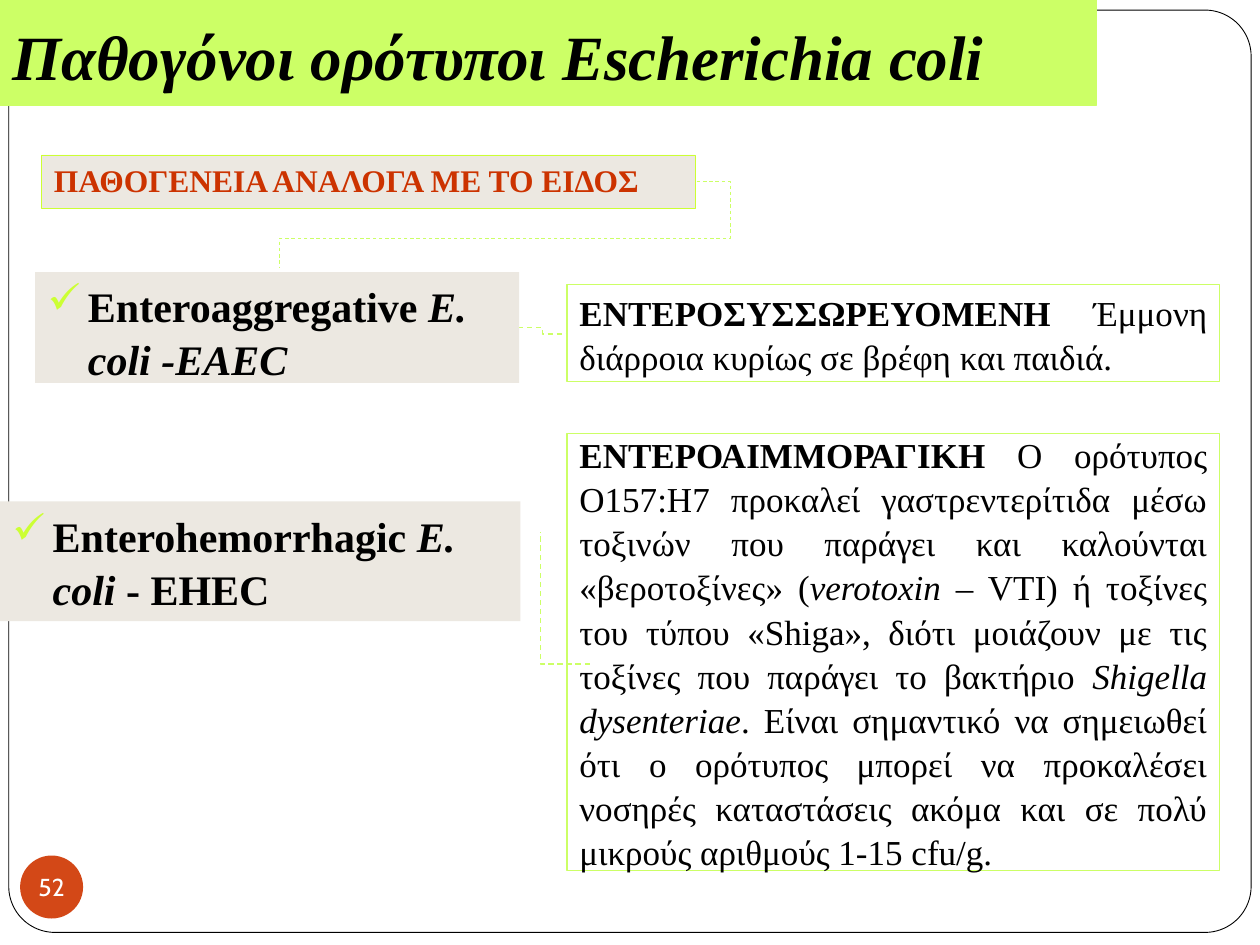
from lxml.etree import SubElement
from pptx import Presentation
from pptx.dml.color import RGBColor
from pptx.enum.dml import MSO_LINE
from pptx.enum.shapes import MSO_CONNECTOR, MSO_SHAPE
from pptx.enum.text import MSO_ANCHOR, MSO_AUTO_SIZE, PP_ALIGN
from pptx.oxml.ns import qn
from pptx.util import Pt

PX = 9144  # 100 px to the inch
SERIF = "Times New Roman"
HUES = {
    "white": "FFFFFF", "black": "000000", "lime": "CCFF66", "neon": "CCFF33",
    "sand": "ECE8E1", "rust": "CC3300", "orange": "D34817",
}


def hue(name):
    return RGBColor.from_string(HUES[name])


def px(*vals):
    return [v * PX for v in vals]


def box(slide, at, fill=None, line=None, width=0.75, kind=MSO_SHAPE.RECTANGLE):
    shape = slide.shapes.add_shape(kind, *px(*at))
    shape.shadow.inherit = False
    if fill:
        shape.fill.solid()
        shape.fill.fore_color.rgb = hue(fill)
    else:
        shape.fill.background()
    if line:
        shape.line.color.rgb = hue(line)
        shape.line.width = Pt(width)
    else:
        shape.line.fill.background()
    return shape


def text(shape, runs, size=20, font=SERIF, color="black", align=PP_ALIGN.LEFT,
         anchor=MSO_ANCHOR.TOP, pad=(10, 5, 10, 5), wrap=True, grow=False,
         hang=0, tick=False, lead=None):
    """Fill a shape with one paragraph; runs are (words, style) with style from 'b' and 'i'."""
    frame = shape.text_frame
    frame.word_wrap = wrap
    frame.vertical_anchor = anchor
    if grow:
        frame.auto_size = MSO_AUTO_SIZE.SHAPE_TO_FIT_TEXT
    (frame.margin_left, frame.margin_top,
     frame.margin_right, frame.margin_bottom) = px(*pad)
    para = frame.paragraphs[0]
    para.alignment = align
    if lead:
        para.line_spacing = lead
    for words, style in runs:
        run = para.add_run()
        run.text = words
        face = run.font
        face.size, face.name = Pt(size), font
        face.bold, face.italic = "b" in style, "i" in style
        face.color.rgb = hue(color)
    props = para._p.get_or_add_pPr()
    if hang:
        props.set("marL", str(hang * PX))
        props.set("indent", str(-hang * PX))
    if tick:
        tint = SubElement(props, qn("a:buClr"))
        SubElement(tint, qn("a:srgbClr"), val=HUES["neon"])
        SubElement(props, qn("a:buChar"), char="✓")


def elbow(slide, start, end, bends=3, adjs=(), width=0.75):
    """Draw a dashed elbow; adjs are the bend places in shares of its size."""
    link = slide.shapes.add_connector(MSO_CONNECTOR.ELBOW, *px(*start, *end))
    link.line.color.rgb = hue("lime")
    link.line.width = Pt(width)
    link.line.dash_style = MSO_LINE.DASH
    props = link._element.spPr
    SubElement(props, qn("a:effectLst"))
    geom = props.find(qn("a:prstGeom"))
    geom.set("prst", f"bentConnector{bends}")
    for n, adj in enumerate(adjs, 1):
        SubElement(geom.find(qn("a:avLst")), qn("a:gd"), name=f"adj{n}",
                   fmla=f"val {round(adj * 100000)}")


def strain(slide, at, runs):
    text(box(slide, at, "sand"), runs, size=24, hang=32, tick=True, lead=1.05)


def detail(slide, at, runs):
    text(box(slide, at, line="lime"), runs, align=PP_ALIGN.JUSTIFY,
         anchor=MSO_ANCHOR.MIDDLE, grow=True, lead=1.05)


def main():
    deck = Presentation()
    deck.slide_width, deck.slide_height = px(1000, 750)
    slide = deck.slides.add_slide(deck.slide_layouts[6])

    frame = box(slide, (7, 8, 986, 732), "white", "black", 0.5,
                MSO_SHAPE.ROUNDED_RECTANGLE)
    frame.adjustments[0] = 0.05
    text(box(slide, (0, 0, 870, 84), "lime", "lime"),
         [("Παθογόνοι ορότυποι Escherichia coli", "bi")], size=36,
         anchor=MSO_ANCHOR.BOTTOM, pad=(10, 5, 10, 10))
    text(box(slide, (16, 679, 50, 50), "orange", kind=MSO_SHAPE.OVAL),
         [("52", "")], size=14, font="Cabin", color="white",
         align=PP_ALIGN.CENTER, anchor=MSO_ANCHOR.MIDDLE, pad=(0, 0, 0, 0),
         wrap=False)
    text(box(slide, (33, 123, 519, 42), "sand", "neon", 0.25),
         [("ΠΑΘΟΓΕΝΕΙΑ ΑΝΑΛΟΓΑ ΜΕ ΤΟ ΕΙΔΟΣ", "b")], size=18, color="rust",
         hang=38)
    elbow(slide, (553, 144), (222, 212), 4, (-0.08, 0.66), 0.5)

    detail(slide, (450, 226, 518, 77), [
        ("ΕΝΤΕΡΟΣΥΣΣΩΡΕΥΟΜΕΝΗ", "b"),
        (" Έμμονη διάρροια κυρίως σε βρέφη και παιδιά.", "")])
    elbow(slide, (411, 260), (450, 265))
    strain(slide, (28, 216, 384, 88), [
        ("Enteroaggregative", "b"), (" E. coli -EAEC", "bi")])

    strain(slide, (0, 398, 413, 95), [
        ("Enterohemorrhagic ", "b"), ("E. coli ", "bi"), ("- EΗEC", "b")])
    detail(slide, (450, 344, 518, 347), [
        ("ΕΝΤΕΡΟΑΙΜΜΟΡΑΓΙΚΗ", "b"),
        (" Ο ορότυπος Ο157:H7 προκαλεί γαστρεντερίτιδα μέσω τοξινών που "
         "παράγει και καλούνται «βεροτοξίνες» (", ""),
        ("verotoxin", "i"),
        (" – VTI) ή τοξίνες του τύπου «Shiga», διότι μοιάζουν με τις "
         "τοξίνες που παράγει το βακτήριο ", ""),
        ("Shigella dysenteriae", "i"),
        (". Είναι σημαντικό να σημειωθεί ότι ο ορότυπος μπορεί να "
         "προκαλέσει νοσηρές καταστάσεις ακόμα και σε πολύ μικρούς "
         "αριθμούς 1-15 cfu/g.", "")])
    elbow(slide, (468, 527), (429, 422), 2)

    deck.save("out.pptx")


if __name__ == "__main__":
    main()
